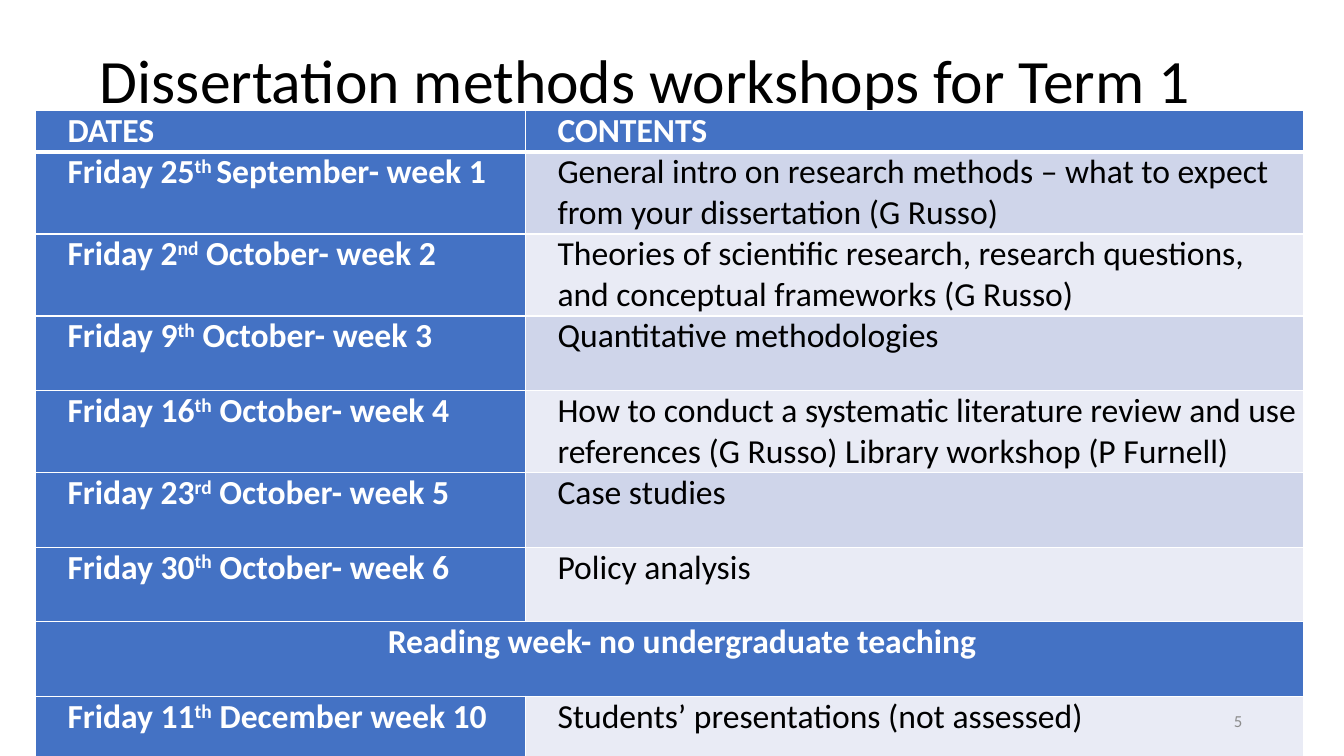
from lxml import etree
from pptx import Presentation
from pptx import util as u
from pptx.dml.color import RGBColor
from pptx.enum import text
from pptx.oxml import ns

WHITE = RGBColor(0xFF, 0xFF, 0xFF)
BLACK = RGBColor(0, 0, 0)
BLUE = RGBColor(0x44, 0x72, 0xC4)
BANDS = (RGBColor(0xCF, 0xD5, 0xEA), RGBColor(0xE9, 0xEB, 0xF5))
GREY = RGBColor(0x8C, 0x8C, 0x8C)

TITLE = "Dissertation methods workshops for Term 1"
HEADINGS = ("DATES", "CONTENTS")
BREAK = "Reading week- no undergraduate teaching"
WORKSHOPS = [
    ("Friday 25^th ^September- week 1",
     "General intro on research methods – what to expect from your dissertation (G Russo)"),
    ("Friday 2^nd^ October- week 2",
     "Theories of scientific research, research questions, and conceptual frameworks (G Russo)"),
    ("Friday 9^th^ October- week 3", "Quantitative methodologies"),
    ("Friday 16^th^ October- week 4",
     "How to conduct a systematic literature review and use references (G Russo) "
     "Library workshop (P Furnell)"),
    ("Friday 23^rd^ October- week 5", "Case studies"),
    ("Friday 30^th^ October- week 6", "Policy analysis"),
    (BREAK, ""),
    ("Friday 11^th^ December week 10", "Students’ presentations (not assessed)"),
]


def write(frame, words, size=24, color=BLACK, bold=False, font="Calibri",
          align=text.PP_ALIGN.LEFT, spacing=1.0, indent=0):
    para = frame.paragraphs[0]
    para.alignment = align
    para.line_spacing = spacing
    if indent:
        properties = para._p.get_or_add_pPr()
        properties.set("marL", str(u.Inches(indent)))
        properties.set("indent", "0")
    for position, part in enumerate(words.split("^")):
        span = para.add_run()
        span.text = part
        span.font.name = font
        span.font.size = u.Pt(size)
        span.font.bold = bold
        span.font.color.rgb = color
        if position % 2:
            span._r.get_or_add_rPr().set("baseline", "30000")


class SlideBuilder:
    def __init__(self, deck):
        self.slide = deck.slides.add_slide(deck.slide_layouts[5])

    def place(self, left, top, width, height):
        return [u.Inches(value) for value in (left, top, width, height)]

    def title(self, words, area):
        box = self.slide.shapes.title
        box.left, box.top, box.width, box.height = self.place(*area)
        box.text_frame.vertical_anchor = text.MSO_ANCHOR.MIDDLE
        write(box.text_frame, words, size=44, spacing=0.9)

    def label(self, words, area, **style):
        box = self.slide.shapes.add_textbox(*self.place(*area))
        box.text_frame.word_wrap = True
        box.text_frame.vertical_anchor = text.MSO_ANCHOR.MIDDLE
        write(box.text_frame, words, **style)

    def table(self, area, widths, heights):
        frame = self.slide.shapes.add_table(len(heights), len(widths), *self.place(*area))
        table = frame.table
        for column, width in zip(table.columns, widths):
            column.width = u.Inches(width)
        for row, height in zip(table.rows, heights):
            row.height = u.Inches(height)
        return table

    def cell(self, cell, words, fill, top=1, bottom=1, **style):
        cell.margin_left = cell.margin_right = u.Inches(0.07)
        cell.margin_top = cell.margin_bottom = 0
        properties = cell._tc.get_or_add_tcPr()
        for side, width in zip("LRTB", (1, 1, top, bottom)):
            line = etree.SubElement(properties, ns.qn(f"a:ln{side}"), w=str(u.Pt(width)))
            solid = etree.SubElement(line, ns.qn("a:solidFill"))
            etree.SubElement(solid, ns.qn("a:srgbClr"), val=str(WHITE))
        cell.fill.solid()
        cell.fill.fore_color.rgb = fill
        if words:
            write(cell.text_frame, words, indent=0.25, **style)


def main():
    deck = Presentation()
    deck.slide_width, deck.slide_height = u.Inches(13.33), u.Inches(7.5)
    page = SlideBuilder(deck)
    page.title(TITLE, (0.89, 0.1, 11.5, 1.45))

    heights = [0.39] + [0.74] * len(WORKSHOPS)
    schedule = page.table((0.35, 1.1, 12.58, sum(heights)), (4.86, 7.72), heights)
    for column, heading in enumerate(HEADINGS):
        page.cell(schedule.cell(0, column), heading, BLUE, bottom=3, color=WHITE, bold=True)
    for row, (date, content) in enumerate(WORKSHOPS, 1):
        top = 3 if row == 1 else 1
        is_break = date == BREAK
        align = text.PP_ALIGN.CENTER if is_break else text.PP_ALIGN.LEFT
        band = BLUE if is_break else BANDS[(row - 1) % 2]
        page.cell(schedule.cell(row, 0), date, BLUE, top=top, color=WHITE, bold=True, align=align)
        page.cell(schedule.cell(row, 1), content, band, top=top)
        if is_break:
            schedule.cell(row, 0).merge(schedule.cell(row, 1))

    page.label("5", (9.42, 6.95, 3, 0.4), size=12, color=GREY, align=text.PP_ALIGN.RIGHT)
    deck.save("out.pptx")


if __name__ == "__main__":
    main()
